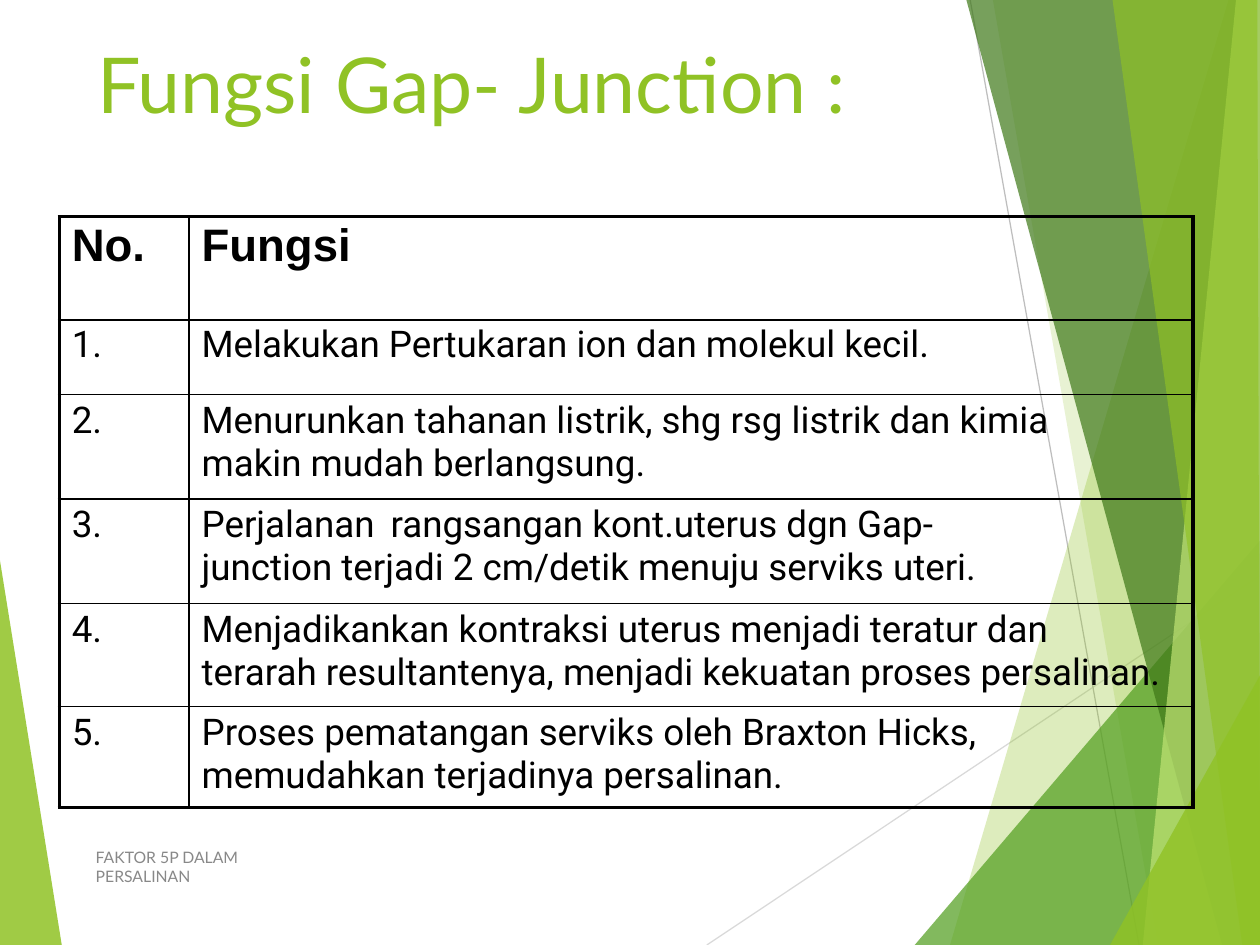
import pptx
import pptx.util
import pptx.dml.color
import pptx.enum.shapes
import pptx.enum.text
import pptx.oxml.ns
import lxml.etree

COLORS = {
    "lime": "90C225", "leaf": "539F20", "forest": "3E7818", "pale": "C0E374",
    "light": "D9D9D9", "silver": "BEBEBE", "gray": "888888", "black": "000000",
}
THIN, THICK = 1, 2.25
qn = pptx.oxml.ns.qn


def rgb(name):
    return pptx.dml.color.RGBColor.from_string(COLORS[name])


def set_all(target, values):
    for key, value in values.items():
        setattr(target, key, value)


def sub(parent, tag, **attributes):
    child = lxml.etree.SubElement(parent, qn(tag))
    for key, value in attributes.items():
        child.set(key, str(value))
    return child


class GridSlide:
    """A slide on a grid of 100 columns by 75 rows."""

    def __init__(self, deck):
        self.slide = deck.slides.add_slide(deck.slide_layouts[5])
        self.shapes = self.slide.shapes
        self.column = deck.slide_width / 100
        self.row = deck.slide_height / 75

    def point(self, x, y):
        return round(x * self.column), round(y * self.row)

    def place(self, shape, x, y, width, height):
        left, top = self.point(x, y)
        w, h = self.point(width, height)
        set_all(shape, {"left": left, "top": top, "width": w, "height": h})

    def facet(self, color, opacity, corners):
        points = [self.point(*corner) for corner in corners]
        builder = self.shapes.build_freeform(*points[0], scale=1.0)
        builder.add_line_segments(points[1:], close=True)
        shape = builder.convert_to_shape()
        shape.shadow.inherit = False
        shape.fill.solid()
        shape.fill.fore_color.rgb = rgb(color)
        shape.line.fill.background()
        tint = shape._element.spPr.find(qn("a:solidFill"))[0]
        sub(tint, "a:alpha", val=opacity * 1000)

    def hairline(self, color, start, end):
        line = self.shapes.add_connector(
            pptx.enum.shapes.MSO_CONNECTOR.STRAIGHT, *self.point(*start), *self.point(*end))
        line.line.color.rgb = rgb(color)
        line.line.width = pptx.util.Pt(0.72)
        sub(line._element.spPr, "a:effectLst")

    def fill_text(self, frame, text, font, size, color, bold=False, before=0, indent=0):
        frame.text = text
        for number, paragraph in enumerate(frame.paragraphs):
            set_all(paragraph, {
                "alignment": pptx.enum.text.PP_ALIGN.LEFT,
                "space_before": pptx.util.Pt(0 if number else before),
            })
            properties = paragraph._p.get_or_add_pPr()
            properties.set("marL", str(pptx.util.Inches(indent)))
            properties.set("indent", "0")
            for run in paragraph.runs:
                set_all(run.font, {"name": font, "size": pptx.util.Pt(size), "bold": bold})
                run.font.color.rgb = rgb(color)

    def text_frame(self, shape, box):
        self.place(shape, *box)
        frame = shape.text_frame
        set_all(frame, {
            "margin_left": 0, "margin_right": 0, "margin_bottom": 0,
            "margin_top": pptx.util.Inches(0.01), "word_wrap": True,
            "vertical_anchor": pptx.enum.text.MSO_ANCHOR.TOP,
            "auto_size": pptx.enum.text.MSO_AUTO_SIZE.SHAPE_TO_FIT_TEXT,
        })
        return frame

    def title(self, text, box):
        heading = self.shapes.title
        self.shapes._spTree.append(heading._element)  # in front of the facets
        self.fill_text(self.text_frame(heading, box), text, "Lato", 44, "lime",
                       before=1.1, indent=0.6)

    def footer(self, text, box):
        label = self.shapes.add_textbox(0, 0, 0, 0)
        self.fill_text(self.text_frame(label, box), text, "Lato", 9, "gray",
                       before=0.5, indent=0.01)

    def borders(self, cell, widths):
        properties = cell._tc.get_or_add_tcPr()
        for position, (side, width) in enumerate(widths.items()):
            edge = sub(properties, "a:" + side, w=pptx.util.Pt(width))
            sub(sub(edge, "a:solidFill"), "a:srgbClr", val=COLORS["black"])
            properties.insert(position, edge)

    def table(self, x, y, column_widths, row_heights, rows):
        area = self.shapes.add_table(len(rows), len(column_widths), 0, 0, 0, 0)
        self.place(area, x, y, sum(column_widths), sum(row_heights))
        grid = area.table
        set_all(grid, {"first_row": False, "horz_banding": False})
        for column, width in zip(grid.columns, column_widths):
            column.width = round(width * self.column)
        for row, height in zip(grid.rows, row_heights):
            row.height = round(height * self.row)
        last_row, last_column = len(rows) - 1, len(column_widths) - 1
        for r, row in enumerate(rows):
            for c, text in enumerate(row):
                cell = grid.cell(r, c)
                set_all(cell, {
                    "margin_left": 0, "margin_right": 0, "margin_bottom": 0,
                    "margin_top": pptx.util.Inches(0.03 if r < 2 else 0.04),
                })
                cell.fill.background()
                style = ("Arial", 26) if r == 0 else ("Roboto", 21)
                self.fill_text(cell.text_frame, text, *style, "black", bold=r == 0,
                               before=2.5 if r else 2.2, indent=0.1)
                self.borders(cell, {
                    "lnL": THICK if c == 0 else THIN,
                    "lnR": THICK if c == last_column else THIN,
                    "lnT": THICK if r == 0 else THIN,
                    "lnB": THICK if r == last_row else THIN,
                })
        return grid


FACETS = [
    ("lime", 30, [(97.5, 0), (75.4, 75), (100, 75), (100, 0)]),
    ("lime", 20, [(100, 0), (78.8, 0), (91.9, 75), (100, 75)]),
    ("leaf", 72, [(100, 42.9), (72.6, 75), (100, 75)]),
    ("forest", 70, [(100, 0), (76.7, 0), (97, 75), (100, 75)]),
    ("pale", 70, [(100, 0), (98.1, 0), (90.7, 75), (100, 75)]),
    ("lime", 65, [(99.8, 0), (88.3, 0), (98.6, 75), (100, 75), (100, 67.8), (99.8, 4.4)]),
    ("lime", 80, [(100, 53.6), (88.1, 75), (100, 75)]),
]

FUNCTIONS = [
    "Melakukan Pertukaran ion dan molekul kecil.",
    "Menurunkan tahanan listrik, shg rsg listrik dan kimia\vmakin mudah berlangsung.",
    "Perjalanan\trangsangan kont.uterus dgn Gap-\vjunction terjadi 2 cm/detik menuju serviks uteri.",
    "Menjadikankan kontraksi uterus menjadi teratur dan\v"
    "terarah resultantenya, menjadi kekuatan proses persalinan.",
    "Proses pematangan serviks oleh Braxton Hicks,\nmemudahkan terjadinya persalinan.",
]


def main():
    deck = pptx.Presentation()
    deck.slide_width, deck.slide_height = pptx.util.Inches(10), pptx.util.Inches(7.5)
    page = GridSlide(deck)

    # Green facets and fine lines behind the content
    page.facet("lime", 85, [(0, 44.5), (0, 75), (4.9, 75)])
    page.hairline("light", (56.1, 75), (100, 45.7))
    page.hairline("silver", (77, 0), (90.4, 75))
    for facet in FACETS:
        page.facet(*facet)

    # Heading and footer
    page.title("Fungsi Gap- Junction :", (1.7, 2.8, 96.7, 7.6))
    page.footer("FAKTOR 5P DALAM PERSALINAN", (7.5, 67.2, 17.7, 1.7))

    # Numbered functions
    rows = [("No.", "Fungsi")]
    rows += [(f"{number}.", text) for number, text in enumerate(FUNCTIONS, 1)]
    functions = page.table(4.7, 17.2, [10.3, 79.7], [8.2, 5.9, 8.3, 8.3, 8.2, 8], rows)

    # Tab stop for the gap in the third function
    journey = functions.cell(3, 1).text_frame.paragraphs[0]
    stops = sub(journey._p.get_or_add_pPr(), "a:tabLst")
    sub(stops, "a:tab", pos=pptx.util.Inches(1.65), algn="l")

    deck.save("out.pptx")


if __name__ == "__main__":
    main()
